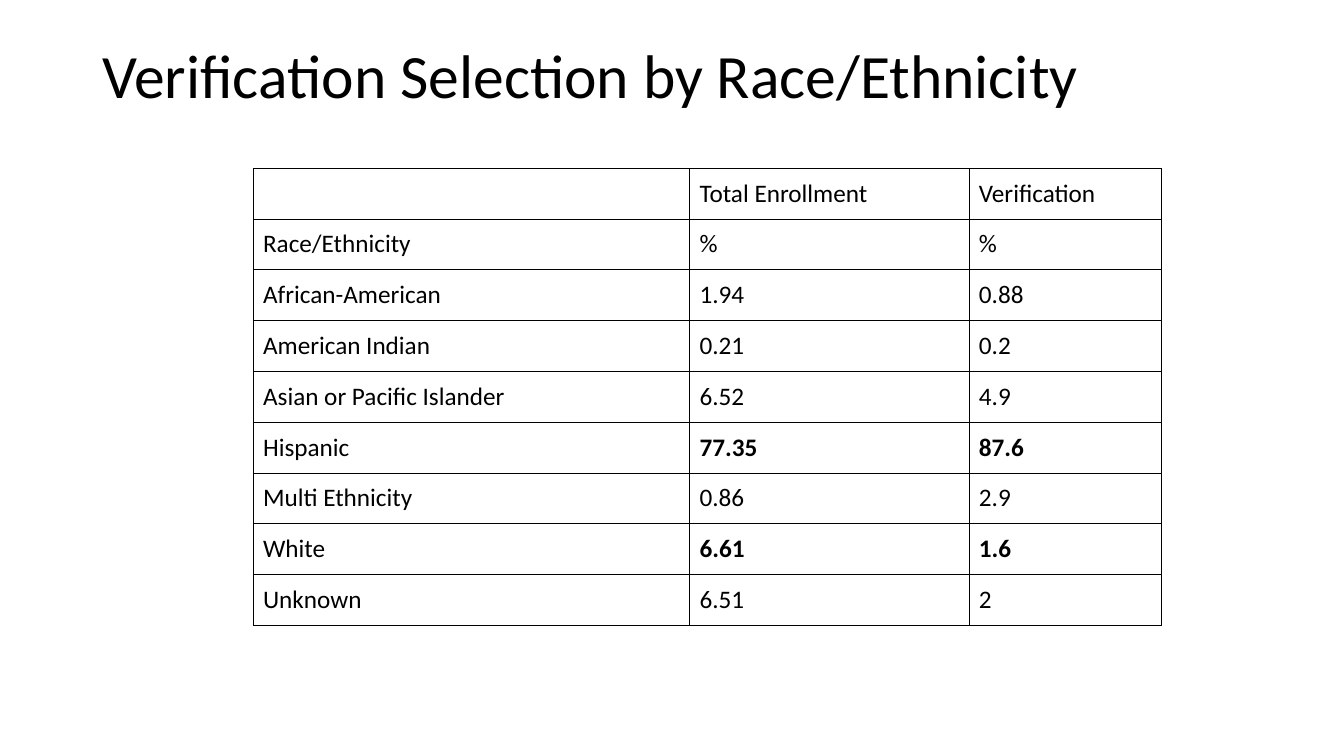
"""Build a slide with a table of verification selection by race and ethnicity."""
from lxml import etree
from pptx import Presentation
from pptx import util as u
from pptx.dml.color import RGBColor
from pptx.enum import text
from pptx.oxml.ns import qn

BLACK = RGBColor(0, 0, 0)
FONT = "Calibri"
ROWS = [
    ("", "Total Enrollment", "Verification"),
    ("Race/Ethnicity", "%", "%"),
    ("African-American", "1.94", "0.88"),
    ("American Indian", "0.21", "0.2"),
    ("Asian or Pacific Islander", "6.52", "4.9"),
    ("Hispanic", "77.35", "87.6"),
    ("Multi Ethnicity", "0.86", "2.9"),
    ("White", "6.61", "1.6"),
    ("Unknown", "6.51", "2"),
]
BOLD = ("Hispanic", "White")
WIDTHS = (11, 7.04, 4.85)
HIGH = 1.28


def add_run(para, words, size, bold=False):
    run = para.add_run()
    run.text = words
    run.font.name = FONT
    run.font.size = u.Pt(size)
    run.font.bold = bold
    run.font.color.rgb = BLACK


def add_lines(cell):
    props = cell._tc.get_or_add_tcPr()
    for pos, side in enumerate(("lnL", "lnR", "lnT", "lnB")):
        line = etree.Element(qn("a:" + side), w=str(u.Pt(0.75)))
        fill = etree.SubElement(line, qn("a:solidFill"))
        etree.SubElement(fill, qn("a:srgbClr"), val=str(BLACK))
        props.insert(pos, line)


deck = Presentation()
deck.slide_width = u.Cm(33.87)
deck.slide_height = u.Cm(19.05)
slide = deck.slides.add_slide(deck.slide_layouts[6])

title = slide.shapes.add_textbox(u.Cm(2.33), u.Cm(1.01), u.Cm(29.21), u.Cm(3.68))
frame = title.text_frame
frame.word_wrap = True
frame.vertical_anchor = text.MSO_ANCHOR.TOP
para = frame.paragraphs[0]
para.line_spacing = 0.9
add_run(para, "Verification Selection by Race/Ethnicity", 44)

grid = slide.shapes.add_table(
    len(ROWS), len(WIDTHS), u.Cm(6.38), u.Cm(4.24),
    u.Cm(sum(WIDTHS)), u.Cm(HIGH * len(ROWS))).table
grid.first_row = False
grid.horz_banding = False
for col, width in zip(grid.columns, WIDTHS):
    col.width = u.Cm(width)

for r, row in enumerate(ROWS):
    grid.rows[r].height = u.Cm(HIGH)
    for c, words in enumerate(row):
        cell = grid.cell(r, c)
        cell.margin_left = cell.margin_right = u.Cm(0.25)
        cell.margin_top = cell.margin_bottom = u.Cm(0.25)
        cell.fill.background()
        add_lines(cell)
        if words:
            add_run(cell.text_frame.paragraphs[0], words, 18,
                    c > 0 and row[0] in BOLD)

deck.save("out.pptx")
